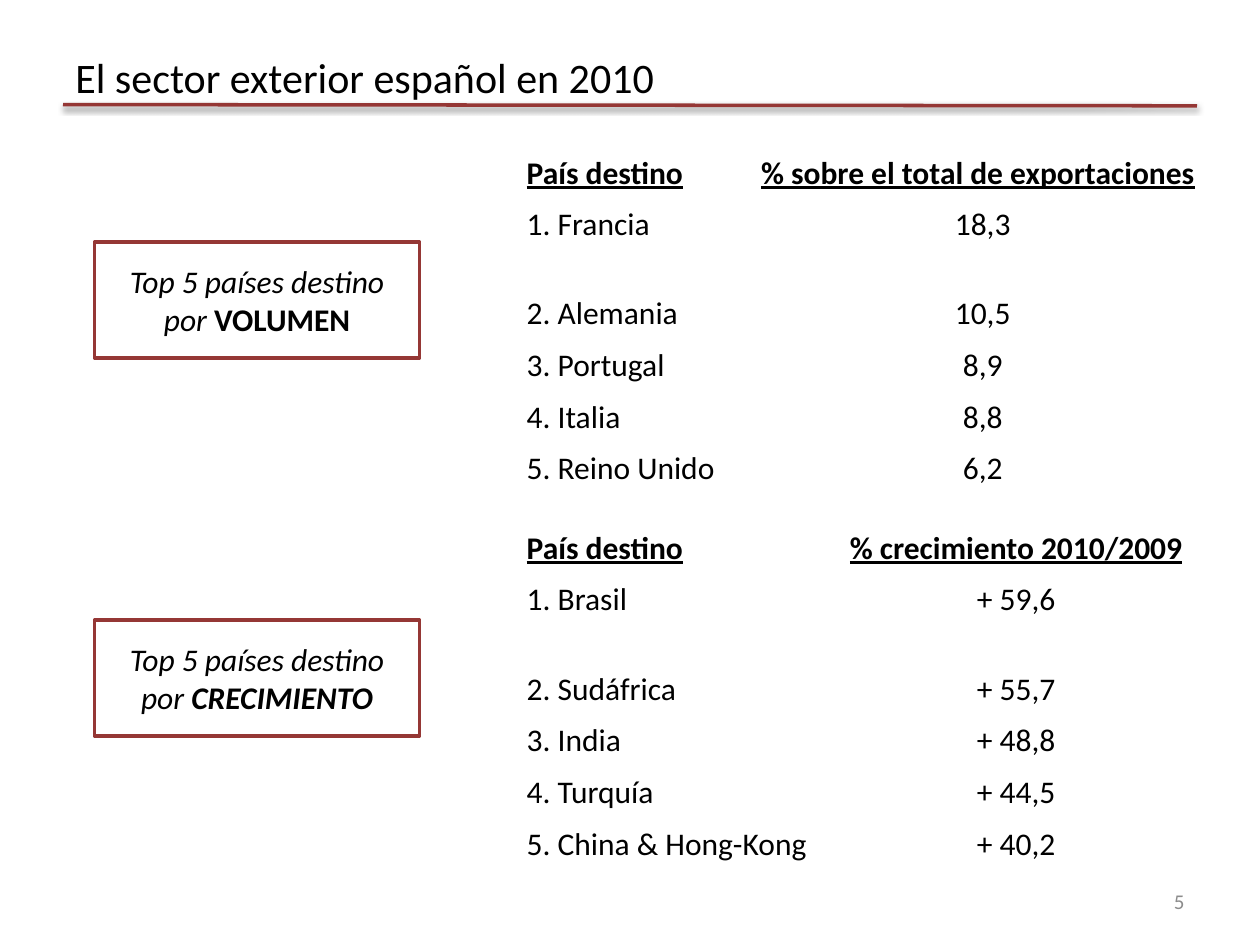
from lxml.etree import SubElement
from pptx import Presentation
from pptx.dml.color import RGBColor
from pptx.enum.shapes import MSO_CONNECTOR, MSO_SHAPE
from pptx.enum.text import MSO_ANCHOR, PP_ALIGN
from pptx.oxml.ns import qn
from pptx.util import Inches, Pt

FONT = "Calibri"
BLACK = "000000"
ACCENT = "953735"
GRAY = "8C8C8C"
ROW_HEIGHT = 0.41
FIRST_ROW_HEIGHT = 0.71


def color(hex_value):
    return RGBColor.from_string(hex_value)


def box(left, top, width, height):
    return [Inches(value) for value in (left, top, width, height)]


def add_run(paragraph, text, size=18, hex_value=BLACK, bold=False, italic=False, underline=False):
    run = paragraph.add_run()
    run.text = text
    font = run.font
    font.name = FONT
    font.size = Pt(size)
    font.color.rgb = color(hex_value)
    font.bold = bold
    font.italic = italic
    font.underline = underline


def add_label(slide, area, text, size, hex_value, align):
    frame = slide.shapes.add_textbox(*box(*area)).text_frame
    frame.word_wrap = True
    frame.vertical_anchor = MSO_ANCHOR.MIDDLE
    frame.paragraphs[0].alignment = align
    add_run(frame.paragraphs[0], text, size, hex_value)


def add_title_rule(slide, left, top, right, bottom):
    rule = slide.shapes.add_connector(
        MSO_CONNECTOR.STRAIGHT, Inches(left), Inches(top), Inches(right), Inches(bottom)
    )
    rule.line.color.rgb = color(ACCENT)
    rule.line.width = Pt(2)
    effects = SubElement(rule._element.spPr, qn("a:effectLst"))
    shadow = SubElement(
        effects, qn("a:outerShdw"),
        blurRad=str(Pt(3.1)), dist=str(Pt(1.6)), dir="5400000", rotWithShape="0",
    )
    shade = SubElement(shadow, qn("a:srgbClr"), val=BLACK)
    SubElement(shade, qn("a:alpha"), val="38000")


def add_criterion(slide, area, criterion, italic):
    frame_box = slide.shapes.add_shape(MSO_SHAPE.RECTANGLE, *box(*area))
    frame_box.shadow.inherit = False
    frame_box.fill.background()
    frame_box.line.color.rgb = color(ACCENT)
    frame_box.line.width = Pt(2)
    frame = frame_box.text_frame
    frame.word_wrap = True
    frame.vertical_anchor = MSO_ANCHOR.MIDDLE
    frame.margin_top = frame.margin_bottom = Inches(0.15)
    paragraph = frame.paragraphs[0]
    paragraph.alignment = PP_ALIGN.CENTER
    add_run(paragraph, "Top 5 países destino por ", italic=True)
    add_run(paragraph, criterion, bold=True, italic=italic)


def add_ranking(slide, left, top, widths, measure, measure_align, ranking):
    rows = [("País destino", measure)]
    rows += [(f"{rank}. {country}", value) for rank, (country, value) in enumerate(ranking, 1)]
    heights = [ROW_HEIGHT, FIRST_ROW_HEIGHT] + [ROW_HEIGHT] * (len(rows) - 2)
    table = slide.shapes.add_table(
        len(rows), len(widths), *box(left, top, sum(widths), sum(heights))
    ).table
    table.first_row = table.horz_banding = False
    for column, width in zip(table.columns, widths):
        column.width = Inches(width)
    for index, (texts, height) in enumerate(zip(rows, heights)):
        table.rows[index].height = Inches(height)
        header = index == 0
        aligns = (PP_ALIGN.LEFT, measure_align if header else PP_ALIGN.CENTER)
        for cell, text, align in zip(table.rows[index].cells, texts, aligns):
            cell.fill.background()
            cell.vertical_anchor = MSO_ANCHOR.MIDDLE if header else MSO_ANCHOR.TOP
            paragraph = cell.text_frame.paragraphs[0]
            paragraph.alignment = align
            add_run(paragraph, text, bold=header, underline=header)


def main():
    presentation = Presentation()
    presentation.slide_width = Inches(10)
    presentation.slide_height = Inches(7.5)
    slide = presentation.slides.add_slide(presentation.slide_layouts[6])

    add_title_rule(slide, 0.5, 0.83, 9.5, 0.84)
    add_label(slide, (7.17, 6.95, 2.33, 0.4), "5", 12, GRAY, PP_ALIGN.RIGHT)
    add_label(slide, (0.5, 0.3, 9, 0.62), "El sector exterior español en 2010", 24, BLACK, PP_ALIGN.LEFT)

    volume = [("Francia", "18,3"), ("Alemania", "10,5"), ("Portugal", "8,9"),
              ("Italia", "8,8"), ("Reino Unido", "6,2")]
    growth = [("Brasil", "+ 59,6"), ("Sudáfrica", "+ 55,7"), ("India", "+ 48,8"),
              ("Turquía", "+ 44,5"), ("China & Hong-Kong", "+ 40,2")]
    add_ranking(slide, 4.08, 1.17, (1.86, 3.72), "% sobre el total de exportaciones",
                PP_ALIGN.LEFT, volume)
    add_ranking(slide, 4.08, 4.15, (2.55, 2.87), "% crecimiento 2010/2009",
                PP_ALIGN.CENTER, growth)
    add_criterion(slide, (0.75, 1.92, 2.58, 0.92), "VOLUMEN", False)
    add_criterion(slide, (0.75, 4.92, 2.58, 0.92), "CRECIMIENTO", True)

    presentation.save("out.pptx")


if __name__ == "__main__":
    main()
